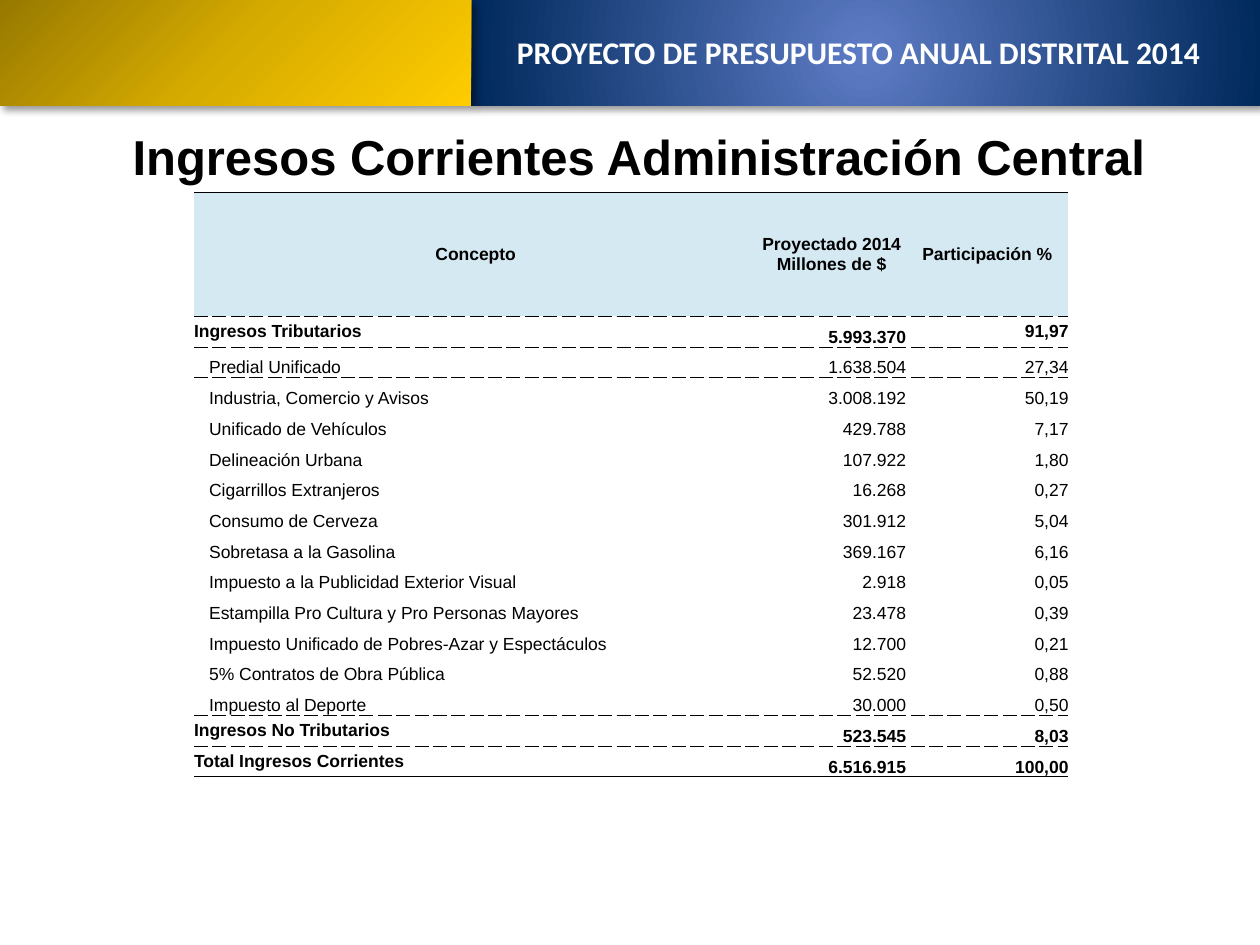
import pptx
import pptx.util
import pptx.oxml
import pptx.oxml.ns
from pptx.dml.color import RGBColor
from pptx.enum.shapes import MSO_SHAPE
from pptx.enum.text import MSO_ANCHOR, PP_ALIGN
from pptx.util import Inches

COLORS = {
    "text": "000000", "white": "FFFFFF", "header": "D5E9F3",
    "blue_light": "5E7CC5", "blue_dark": "00295C",
    "gold_dark": "977900", "gold_mid": "D7AC00", "gold": "FFCC00",
}
NO_STYLE = "{2D5ABB26-0587-4C30-8999-92F81FD0307C}"
HEADINGS = [["Concepto"], ["Proyectado 2014", "Millones de $"], ["Participación %"]]
TOTALS = ("Ingresos Tributarios", "Ingresos No Tributarios", "Total Ingresos Corrientes")
ROWS = [
    ("Ingresos Tributarios", "5.993.370", "91,97"),
    ("Predial Unificado", "1.638.504", "27,34"),
    ("Industria, Comercio y Avisos", "3.008.192", "50,19"),
    ("Unificado de Vehículos", "429.788", "7,17"),
    ("Delineación Urbana", "107.922", "1,80"),
    ("Cigarrillos Extranjeros", "16.268", "0,27"),
    ("Consumo de Cerveza", "301.912", "5,04"),
    ("Sobretasa a la Gasolina", "369.167", "6,16"),
    ("Impuesto a la Publicidad Exterior Visual", "2.918", "0,05"),
    ("Estampilla Pro Cultura y Pro Personas Mayores", "23.478", "0,39"),
    ("Impuesto Unificado de Pobres-Azar y Espectáculos", "12.700", "0,21"),
    ("5% Contratos de Obra Pública", "52.520", "0,88"),
    ("Impuesto al Deporte", "30.000", "0,50"),
    ("Ingresos No Tributarios", "523.545", "8,03"),
    ("Total Ingresos Corrientes", "6.516.915", "100,00"),
]


def rgb(name):
    return RGBColor.from_string(COLORS[name])


def element(xml):
    """Parse a fragment whose root element carries the a: prefix."""
    tag, rest = xml.split(" ", 1)
    return pptx.oxml.parse_xml(f'{tag} {pptx.oxml.ns.nsdecls("a")} {rest}')


def write(tf, lines, size, align, color="text", bold=True, font="Arial"):
    for i, line in enumerate(lines):
        p = tf.paragraphs[0] if i == 0 else tf.add_paragraph()
        p.alignment = align
        r = p.add_run()
        r.text = line
        r.font.name, r.font.size, r.font.bold = font, pptx.util.Pt(size), bold
        r.font.color.rgb = rgb(color)


def add_panel(s, left, top, width, height, stops, focus):
    """Band panel with a radial gradient, spreading from focus, and a soft shadow."""
    sp = s.shapes.add_shape(MSO_SHAPE.RECTANGLE, left, top, width, height)
    sp.line.fill.background()
    sp.shadow.inherit = False
    sp.fill.gradient()
    spPr = sp._element.spPr
    gs = "".join(f'<a:gs pos="{pos * 1000}"><a:srgbClr val="{COLORS[name]}"/></a:gs>'
                 for pos, name in stops)
    rect = " ".join(f'{side}="{pct * 1000}"' for side, pct in zip("ltrb", focus))
    spPr.replace(spPr.find(pptx.oxml.ns.qn("a:gradFill")), element(
        f'<a:gradFill rotWithShape="1"><a:gsLst>{gs}</a:gsLst>'
        f'<a:path path="circle"><a:fillToRect {rect}/></a:path></a:gradFill>'))
    spPr.find(pptx.oxml.ns.qn("a:effectLst")).append(element(
        f'<a:outerShdw blurRad="{pptx.util.Pt(4)}" dist="{pptx.util.Pt(3)}" dir="2700000" '
        'algn="tl" rotWithShape="0"><a:srgbClr val="000000"><a:alpha val="40000"/>'
        '</a:srgbClr></a:outerShdw>'))


def add_band(s, left, top, width, height):
    split = Inches(3.74)
    add_panel(s, left + split, top, width - split, height,
              [(0, "blue_light"), (100, "blue_dark")], (50, 50, 50, 50))
    add_panel(s, left, top, split, height,
              [(0, "gold_dark"), (50, "gold_mid"), (100, "gold")], (0, 0, 100, 100))
    tb = s.shapes.add_textbox(left + Inches(3.9), top + Inches(0.21),
                              Inches(5.83), Inches(0.46))
    tb.text_frame.word_wrap = True
    write(tb.text_frame, ["PROYECTO DE PRESUPUESTO ANUAL DISTRITAL 2014"], 18,
          PP_ALIGN.CENTER, "white", font="Calibri")


def add_title(s, left, top, width, height):
    sp = s.shapes.title
    sp.left, sp.top, sp.width, sp.height = left, top, width, height
    tf = sp.text_frame
    tf.word_wrap = True
    tf.vertical_anchor = MSO_ANCHOR.TOP
    write(tf, ["Ingresos Corrientes Administración Central"], 28, PP_ALIGN.CENTER)


def format_cell(cell, fill, anchor, top=None, bottom=None, indent=0):
    """Set borders (a dash name or None for no line), fill, margins and anchor."""
    tcPr = cell._tc.get_or_add_tcPr()
    for tag, dash in (("lnT", top), ("lnB", bottom)):
        if dash:
            tcPr.append(element(
                f'<a:{tag} w="{pptx.util.Pt(0.5)}"><a:solidFill><a:srgbClr '
                f'val="{COLORS["text"]}"/></a:solidFill><a:prstDash val="{dash}"/></a:{tag}>'))
    cell.fill.solid()
    cell.fill.fore_color.rgb = rgb(fill)
    cell.margin_left = indent
    cell.margin_right = cell.margin_top = cell.margin_bottom = 0
    cell.vertical_anchor = anchor


def add_income_table(s, left, top, width, height):
    table = s.shapes.add_table(len(ROWS) + 1, 3, left, top, width, height).table
    table.first_row = table.horz_banding = False
    table._tbl.tblPr.find(pptx.oxml.ns.qn("a:tableStyleId")).text = NO_STYLE
    for col, w in zip(table.columns, (4.47, 1.18, 1.29)):
        col.width = Inches(w)
    head = Inches(0.98)
    for i, row in enumerate(table.rows):
        row.height = head if i == 0 else (height - head) // len(ROWS)

    for c, lines in enumerate(HEADINGS):
        cell = table.cell(0, c)
        format_cell(cell, "header", MSO_ANCHOR.MIDDLE, "solid", "dash")
        write(cell.text_frame, lines, 10, PP_ALIGN.CENTER)

    last = len(ROWS) - 1
    for i, values in enumerate(ROWS):
        total = values[0] in TOTALS
        above = total or ROWS[i - 1][0] in TOTALS
        below = total or ROWS[i + 1][0] in TOTALS
        bottom = "solid" if i == last else "dash" if below else None
        for c, value in enumerate(values):
            cell = table.cell(i + 1, c)
            middle = total and (c == 0 or (i == 0 and c == 2))
            format_cell(cell, "white", MSO_ANCHOR.MIDDLE if middle else MSO_ANCHOR.BOTTOM,
                        "dash" if above else None, bottom,
                        Inches(0.12) if c == 0 and not total else 0)
            write(cell.text_frame, [value], 10,
                  PP_ALIGN.LEFT if c == 0 else PP_ALIGN.RIGHT, bold=total)


def main():
    prs = pptx.Presentation()
    prs.slide_width, prs.slide_height = Inches(10), Inches(7.5)
    s = prs.slides.add_slide(prs.slide_layouts[5])
    add_band(s, 0, 0, prs.slide_width, Inches(0.84))
    add_title(s, Inches(0.83), Inches(0.95), Inches(8.48), Inches(0.57))
    add_income_table(s, Inches(1.54), Inches(1.53), Inches(6.94), Inches(4.64))
    prs.save("out.pptx")


if __name__ == "__main__":
    main()
